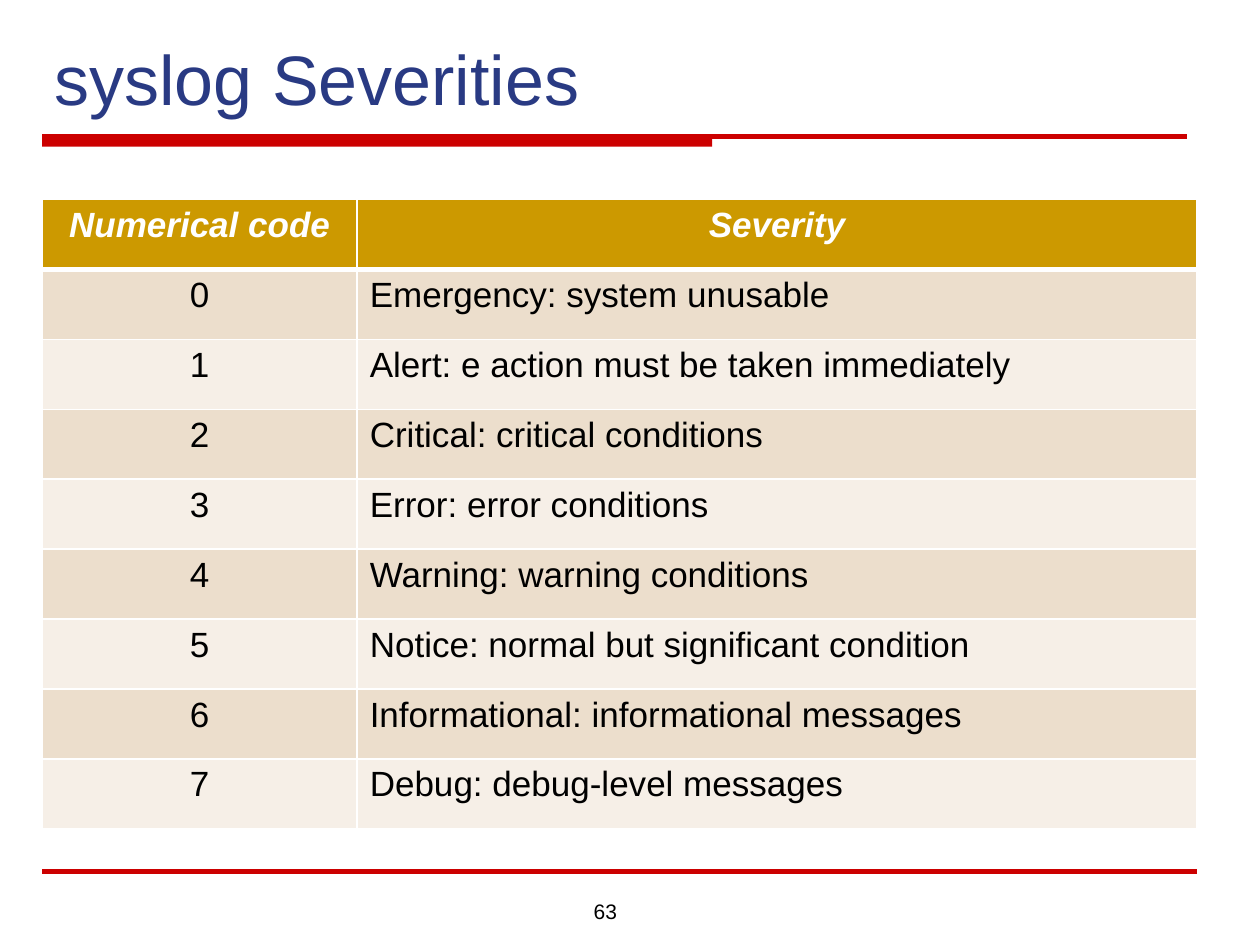
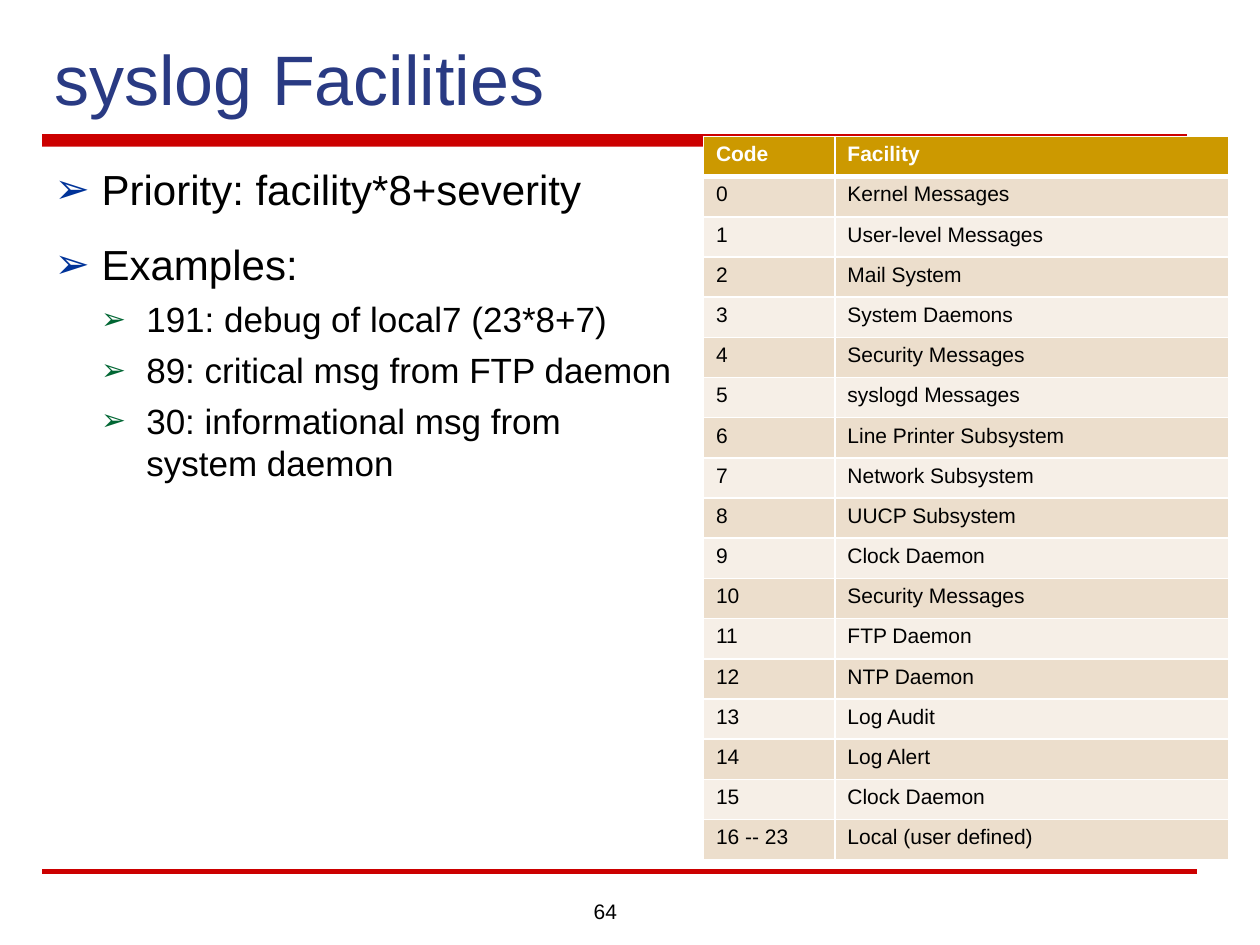
"""Builds two slides on syslog severities and facilities."""
from lxml import etree
from pptx import Presentation, oxml, util as u
from pptx.dml import color
from pptx.enum import shapes, text
from pptx.oxml import ns

FONT, INK, TITLE_BLUE, RED, WHITE = "Arial", "000000", "293A83", "CC0000", "FFFFFF"
HEADER_GOLD, BANDS = "CC9900", ("ECDECC", "F6EFE7")
LEFT, RULE_TOP, FOOT_TOP = 0.85, 2.75, 17.57

SEVERITIES = [
    "Emergency: system unusable", "Alert: e action must be taken immediately",
    "Critical: critical conditions", "Error: error conditions",
    "Warning: warning conditions", "Notice: normal but significant condition",
    "Informational: informational messages", "Debug: debug-level messages",
]
FACILITIES = [
    "Kernel Messages", "User-level Messages", "Mail System", "System Daemons",
    "Security Messages", "syslogd Messages", "Line Printer Subsystem",
    "Network Subsystem", "UUCP Subsystem", "Clock Daemon", "Security Messages",
    "FTP Daemon", "NTP Daemon", "Log Audit", "Log Alert", "Clock Daemon",
]
PRIORITY_POINTS = [
    (0, "Priority: facility*8+severity"),
    (0, "Examples:"),
    (1, "191: debug of local7 (23*8+7)"),
    (1, "89: critical msg from FTP daemon"),
    (1, "30: informational msg from system daemon"),
]
LEVELS = [
    dict(size=24, before=14, margin=0.95, hang=0.95, bullet="003399", percent=100),
    dict(size=20, before=5, margin=1.85, hang=0.91, bullet="006633", percent=85),
]


def rgb(value):
    return color.RGBColor.from_string(value)


def style(paragraph, size, ink=INK, bold=False, italic=False):
    font = paragraph.font
    font.name, font.size, font.bold, font.italic = FONT, u.Pt(size), bold, italic
    font.color.rgb = rgb(ink)


def add_box(slide, left, top, width, height, anchor=text.MSO_ANCHOR.TOP):
    frame = slide.shapes.add_textbox(*map(u.Cm, (left, top, width, height))).text_frame
    frame.word_wrap = True
    frame.vertical_anchor = anchor
    return frame


def add_rule(slide, top, right):
    rule = slide.shapes.add_connector(
        shapes.MSO_CONNECTOR.STRAIGHT, *map(u.Cm, (LEFT, top, right, top)))
    rule.line.color.rgb = rgb(RED)
    rule.line.width = u.Pt(3)
    etree.SubElement(rule._element.spPr, ns.qn("a:effectLst"))


def add_frame(deck, title, number):
    slide = deck.slides.add_slide(deck.slide_layouts[6])
    band = slide.shapes.add_shape(
        shapes.MSO_SHAPE.RECTANGLE, *map(u.Cm, (LEFT, RULE_TOP, 13.51, 0.21)))
    band.shadow.inherit = False
    band.fill.solid()
    band.fill.fore_color.rgb = rgb(RED)
    band.line.fill.background()
    add_rule(slide, RULE_TOP, 23.92)
    add_rule(slide, FOOT_TOP, 24.13)

    heading = add_box(slide, LEFT, 0.42, 23.5, 2.12, text.MSO_ANCHOR.BOTTOM).paragraphs[0]
    heading.text = title
    style(heading, 40, TITLE_BLUE)

    page = add_box(slide, 11, 17.99, 1.69, 0.69).paragraphs[0]
    page.text = str(number)
    page.alignment = text.PP_ALIGN.RIGHT
    style(page, 12)
    return slide


def set_borders(cell, row):
    widths = dict(L=1, R=1, T=3 if row == 1 else 1, B=3 if row == 0 else 1)
    for side, points in widths.items():
        cell._tc.get_or_add_tcPr().append(oxml.parse_xml(
            f'<a:ln{side} {ns.nsdecls("a")} w="{u.Pt(points)}"><a:solidFill>'
            f'<a:srgbClr val="{WHITE}"/></a:solidFill></a:ln{side}>'))


def add_code_table(slide, rows, left, top, widths, row_height, size,
                   centred=False, italic_header=False):
    table = slide.shapes.add_table(
        len(rows), len(widths), *map(u.Cm, (left, top, sum(widths), row_height * len(rows)))).table
    for column, width in zip(table.columns, widths):
        column.width = u.Cm(width)
    for r, values in enumerate(rows):
        header = r == 0
        table.rows[r].height = u.Cm(row_height)
        for c, value in enumerate(values):
            cell = table.cell(r, c)
            set_borders(cell, r)
            cell.fill.solid()
            cell.fill.fore_color.rgb = rgb(HEADER_GOLD if header else BANDS[(r - 1) % 2])
            cell.text = value
            entry = cell.text_frame.paragraphs[0]
            if centred and (header or c == 0):
                entry.alignment = text.PP_ALIGN.CENTER
            style(entry, size, WHITE if header else INK, header, header and italic_header)


def add_bullets(slide, points, left, top, width, height):
    frame = add_box(slide, left, top, width, height)
    for i, (depth, point) in enumerate(points):
        level = LEVELS[depth]
        item = frame.add_paragraph() if i else frame.paragraphs[0]
        item.text = point
        item.level = depth
        properties = item._p.get_or_add_pPr()
        properties.set("marL", str(u.Cm(level["margin"])))
        properties.set("indent", str(-u.Cm(level["hang"])))
        marker = etree.SubElement(properties, ns.qn("a:buClr"))
        etree.SubElement(marker, ns.qn("a:srgbClr"), val=level["bullet"])
        etree.SubElement(properties, ns.qn("a:buSzPct"), val=str(level["percent"] * 1000))
        etree.SubElement(properties, ns.qn("a:buFont"), typeface=FONT)
        etree.SubElement(properties, ns.qn("a:buChar"), char="➢")
        if i:
            item.space_before = u.Pt(level["before"])
        style(item, level["size"])


def numbered(names):
    return [(str(code), name) for code, name in enumerate(names)]


def main():
    deck = Presentation()
    deck.slide_width, deck.slide_height = u.Cm(25.4), u.Cm(19.05)

    severities = add_frame(deck, "syslog Severities", 63)
    add_code_table(severities, [("Numerical code", "Severity"), *numbered(SEVERITIES)],
                   LEFT, 4.02, (6.35, 16.93), 1.41, 20, centred=True, italic_header=True)

    facilities = add_frame(deck, "syslog Facilities", 64)
    add_bullets(facilities, PRIORITY_POINTS, LEFT, 3.18, 13.12, 14.39)
    add_code_table(facilities, [("Code", "Facility"), *numbered(FACILITIES),
                                ("16 -- 23", "Local (user defined)")],
                   14.18, RULE_TOP, (2.65, 7.94), 0.81, 12)

    deck.save("out.pptx")


if __name__ == "__main__":
    main()
